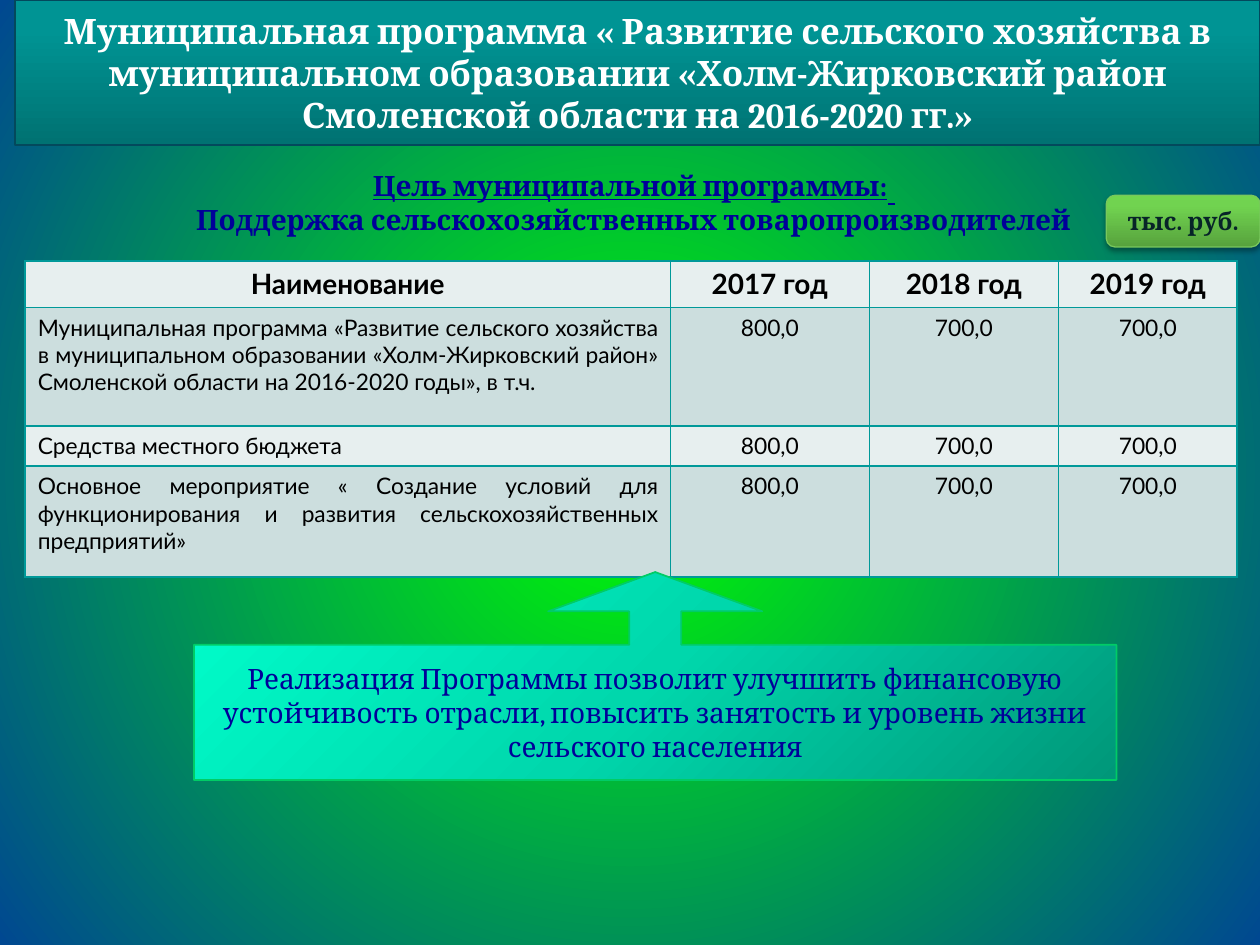
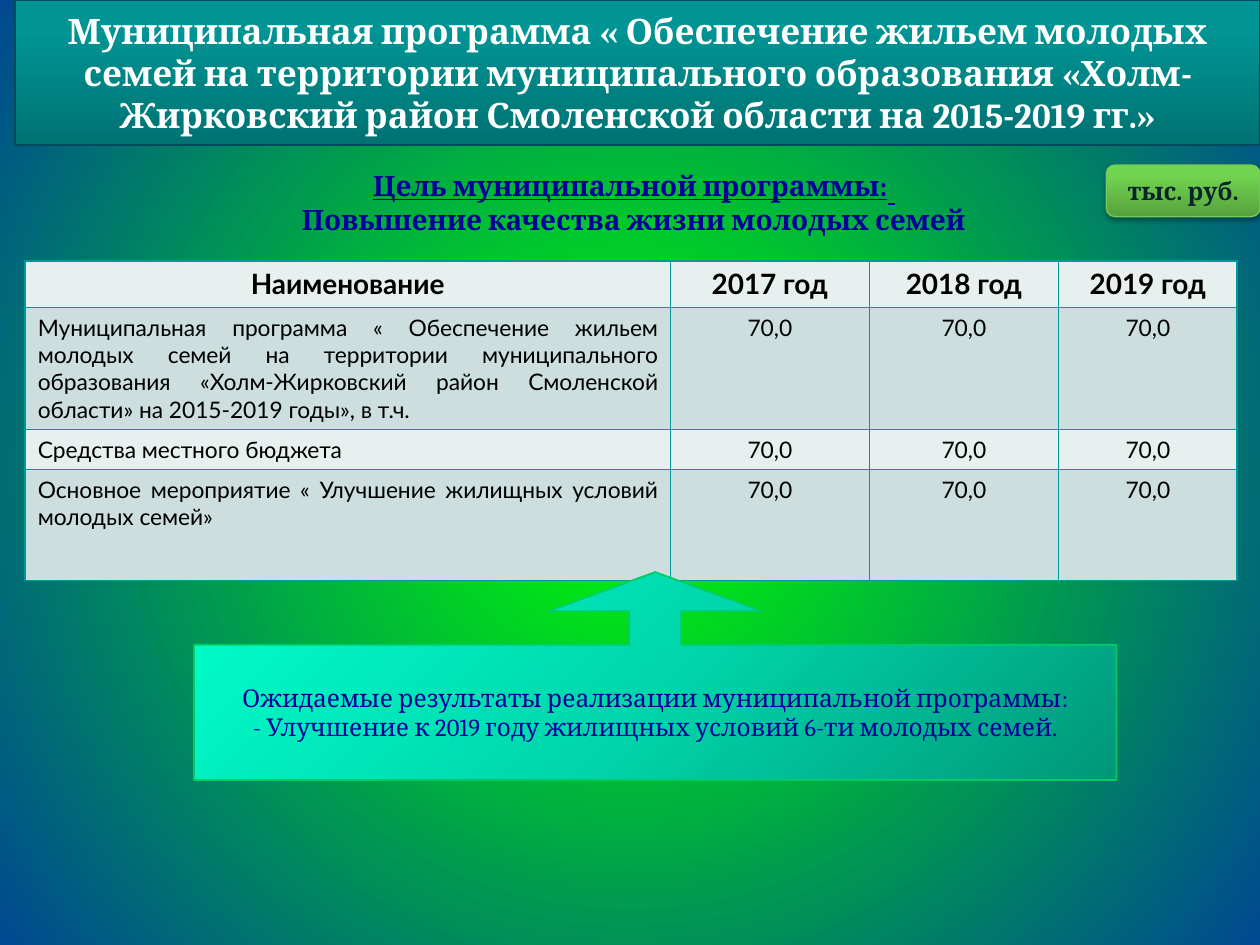
from dataclasses import dataclass

from lxml import etree
from pptx import Presentation
from pptx.dml.color import RGBColor
from pptx.enum.shapes import MSO_SHAPE
from pptx.enum.text import MSO_ANCHOR, PP_ALIGN
from pptx.oxml.ns import qn
from pptx.util import Inches, Pt

CENTER, JUSTIFY = PP_ALIGN.CENTER, PP_ALIGN.JUSTIFY
MIDDLE = MSO_ANCHOR.MIDDLE
BAND = MSO_SHAPE.ROUND_2_DIAG_RECTANGLE
CALLOUT = MSO_SHAPE.UP_ARROW_CALLOUT
ROUNDED = MSO_SHAPE.ROUNDED_RECTANGLE


@dataclass(frozen=True)
class Theme:
    """Colours, fonts and type sizes of the deck."""
    serif: str = "Cambria"
    sans: str = "Lato"
    white: str = "FFFFFF"
    black: str = "000000"
    navy: str = "000099"
    ink: str = "072428"
    grid: str = "009999"
    rows: tuple = ("E7EFEF", "CCDEDE")
    back: tuple = ((0, "00FF00"), (100, "004891"))
    band: tuple = ((0, "007272"), (80, "009494"), (100, "009595"))
    band_line: str = "03495C"
    mint: tuple = ((0, "009779"), (50, "00D7AC"), (100, "00FFCC"))
    mint_line: str = "00CC66"
    leaf: tuple = ((0, "57A23D"), (80, "71D350"), (100, "70D64E"))
    leaf_line: str = "78C85D"
    title: int = 20
    large: int = 16
    small: int = 14
    cell: int = 13


T = Theme()
HEADS = ("Наименование", "2017 год", "2018 год", "2019 год")
COLS = (5.12, 1.58, 1.5, 1.42)
HEIGHTS = (0.37, 0.94, 0.32, 0.88)
LOCAL = "Средства местного бюджета"

SLIDES = (
    dict(
        title="Муниципальная программа « Развитие сельского хозяйства в "
              "муниципальном образовании «Холм-Жирковский район "
              "Смоленской области на 2016-2020 гг.»",
        goal="Поддержка сельскохозяйственных товаропроизводителей",
        names=("Муниципальная программа «Развитие сельского хозяйства в "
               "муниципальном образовании «Холм-Жирковский район» "
               "Смоленской области на 2016-2020 годы», в т.ч.",
               LOCAL,
               "Основное мероприятие « Создание условий для функционирования "
               "и развития сельскохозяйственных предприятий»"),
        sums=("800,0", "700,0", "700,0"),
        result=("Реализация Программы позволит улучшить финансовую "
                "устойчивость отрасли, повысить занятость и уровень жизни "
                "сельского населения",),
        size=T.large,
        tag_top=1.55,
    ),
    dict(
        title="Муниципальная программа « Обеспечение жильем молодых семей "
              "на территории муниципального образования «Холм-Жирковский "
              "район Смоленской области на 2015-2019 гг.»",
        goal="Повышение качества жизни молодых семей",
        names=("Муниципальная программа « Обеспечение жильем молодых семей "
               "на территории муниципального образования «Холм-Жирковский "
               "район Смоленской области» на 2015-2019 годы», в т.ч.",
               LOCAL,
               "Основное мероприятие « Улучшение жилищных условий "
               "молодых семей»"),
        sums=("70,0", "70,0", "70,0"),
        result=("Ожидаемые результаты реализации муниципальной программы:",
                "- Улучшение к 2019 году жилищных условий 6-ти молодых семей."),
        size=T.small,
        tag_top=1.31,
    ),
)


def rgb(code):
    """Turn a hex code into a colour."""
    return RGBColor.from_string(code)


def add(node, tag, **attrs):
    """Append a drawing element with the given attributes."""
    return etree.SubElement(node, qn(tag), {k: str(v) for k, v in attrs.items()})


def blend(fill, root, stops, angle=None):
    """Set a gradient: linear at a clockwise angle, or round from the centre."""
    fill.gradient()
    grad = next(root.iter(qn("a:gradFill")))
    for child in list(grad):
        grad.remove(child)
    steps = add(grad, "a:gsLst")
    for place, code in stops:
        add(add(steps, "a:gs", pos=place * 1000), "a:srgbClr", val=code)
    if angle is None:
        ring = add(grad, "a:path", path="circle")
        add(ring, "a:fillToRect", l=50000, t=50000, r=50000, b=50000)
    else:
        add(grad, "a:lin", ang=angle * 60000, scaled=0)


def style(run, size, color, bold=False, font=T.serif):
    """Format one run."""
    run.font.name, run.font.size, run.font.bold = font, Pt(size), bold
    run.font.color.rgb = rgb(color)


def write(frame, lines, size, color, bold=False, font=T.serif, align=CENTER):
    """Fill a text frame with one paragraph for each line."""
    frame.word_wrap = True
    frame.text = "\n".join(lines)
    for para in frame.paragraphs:
        para.alignment = align
        for run in para.runs:
            style(run, size, color, bold, font)


def add_box(slide, kind, area, stops, angle, line, width, adjust=()):
    """Draw a gradient shape with a thin outline and no shadow."""
    box = slide.shapes.add_shape(kind, *map(Inches, area))
    box.shadow.inherit = False
    for index, value in enumerate(adjust):
        box.adjustments[index] = value
    blend(box.fill, box.element, stops, angle)
    box.line.color.rgb, box.line.width = rgb(line), Pt(width)
    box.text_frame.vertical_anchor = MIDDLE
    return box


def add_title(slide, text):
    """Draw the title band."""
    band = add_box(slide, BAND, (0.12, 0, 9.88, 1.15), T.band, 270,
                   T.band_line, 0.75, (0, 0))
    frame = band.text_frame
    frame.margin_left = frame.margin_right = Inches(0.05)
    frame.margin_top = frame.margin_bottom = 0
    write(frame, [text], T.title, T.white, True)


def add_goal(slide, text):
    """Write the goal under an underlined heading."""
    box = slide.shapes.add_textbox(*map(Inches, (0.2, 1.34, 9.61, 0.67)))
    frame = box.text_frame
    frame.margin_left = Inches(0.05)
    frame.margin_right = frame.margin_top = frame.margin_bottom = 0
    write(frame, ["Цель муниципальной программы:", text], T.large, T.navy, True)
    head = frame.paragraphs[0]
    tail = head.add_run()
    tail.text = " "
    style(tail, T.large, T.navy, font=T.sans)
    for run in head.runs:
        run.font.underline = True


def set_cell(cell, text, row, col):
    """Fill, outline and write one table cell."""
    props = cell._tc.get_or_add_tcPr()
    for side in "LRTB":
        edge = add(props, f"a:ln{side}", w=Pt(1))
        add(add(edge, "a:solidFill"), "a:srgbClr", val=T.grid)
    cell.fill.solid()
    cell.fill.fore_color.rgb = rgb(T.rows[row % 2])
    head = row == 0
    write(cell.text_frame, [text], T.large if head else T.cell, T.black, head,
          T.sans, CENTER if head or col else JUSTIFY)


def add_costs(slide, names, sums):
    """Draw the table of yearly costs."""
    area = (0.2, 2.07, sum(COLS), sum(HEIGHTS))
    frame = slide.shapes.add_table(len(HEIGHTS), len(COLS), *map(Inches, area))
    table = frame.table
    table.first_row = table.horz_banding = False
    for col, width in zip(table.columns, COLS):
        col.width = Inches(width)
    for row, height in zip(table.rows, HEIGHTS):
        row.height = Inches(height)
    data = [HEADS] + [(name, *sums) for name in names]
    for r, line in enumerate(data):
        for c, text in enumerate(line):
            set_cell(table.cell(r, c), text, r, c)


def add_result(slide, lines, size):
    """Draw the arrow callout with the expected result."""
    box = add_box(slide, CALLOUT, (1.54, 4.54, 7.32, 1.65), T.mint, 225,
                  T.mint_line, 1, (0.25, 0.515, 0.189, 0.65))
    write(box.text_frame, lines, size, T.navy)


def add_tag(slide, top):
    """Draw the raised tag that names the unit."""
    tag = add_box(slide, ROUNDED, (8.78, top, 1.22, 0.41), T.leaf, 270,
                  T.leaf_line, 0.75)
    glow = next(tag.element.iter(qn("a:effectLst")))
    shade = add(glow, "a:outerShdw", blurRad=Pt(3.1), dist=Pt(1.8),
                dir=90 * 60000, rotWithShape=0)
    add(add(shade, "a:srgbClr", val=T.black), "a:alpha", val=35000)
    write(tag.text_frame, ["тыс. руб."], T.small, T.ink, True)


def main():
    """Build the deck and save it."""
    deck = Presentation()
    deck.slide_width, deck.slide_height = Inches(10), Inches(7.5)
    for page in SLIDES:
        slide = deck.slides.add_slide(deck.slide_layouts[6])
        blend(slide.background.fill, slide.element, T.back)
        add_goal(slide, page["goal"])
        add_costs(slide, page["names"], page["sums"])
        add_title(slide, page["title"])
        add_result(slide, page["result"], page["size"])
        add_tag(slide, page["tag_top"])
    deck.save("out.pptx")


if __name__ == "__main__":
    main()
